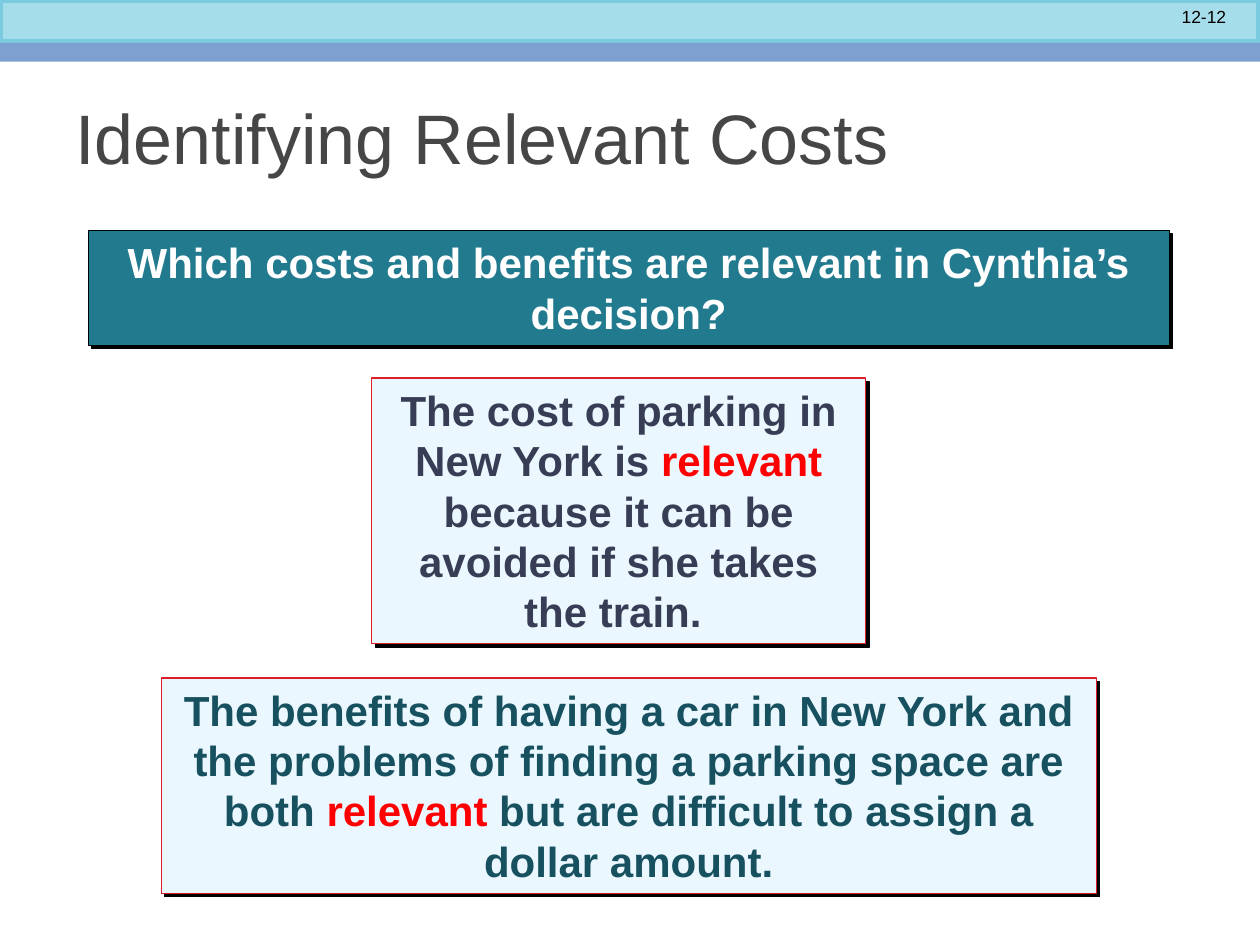
import pptx
import pptx.dml.color
import pptx.enum.shapes
import pptx.enum.text
import pptx.oxml.ns
import pptx.util
from lxml import etree

Inches = pptx.util.Inches
Pt = pptx.util.Pt
Align = pptx.enum.text.PP_ALIGN
Anchor = pptx.enum.text.MSO_ANCHOR
qn = pptx.oxml.ns.qn

COLORS = {
    "band": "A6DDEA",
    "band_edge": "7ACBE0",
    "stripe": "7DA0D0",
    "title": "464646",
    "question": "227A8F",
    "answer": "EBF7FF",
    "answer_edge": "DA1F28",
    "navy": "373D54",
    "teal": "175160",
    "highlight": "FF0000",
    "white": "FFFFFF",
    "black": "000000",
}


def rgb(name):
    return pptx.dml.color.RGBColor.from_string(COLORS[name])


def style_font(font, size, color, bold=False):
    font.name = "Arial"
    font.size = Pt(size)
    font.bold = bold
    font.color.rgb = rgb(color)


def add_rect(slide, box, fill, edge=None, edge_width=0.75):
    rect = slide.shapes.add_shape(
        pptx.enum.shapes.MSO_SHAPE.RECTANGLE, *map(Inches, box))
    rect.shadow.inherit = False
    rect.fill.solid()
    rect.fill.fore_color.rgb = rgb(fill)
    if edge:
        rect.line.color.rgb = rgb(edge)
        rect.line.width = Pt(edge_width)
    else:
        rect.line.fill.background()
    return rect


def add_hard_shadow(rect):
    effects = rect.element.spPr.find(qn("a:effectLst"))
    shadow = etree.SubElement(
        effects, qn("a:outerShdw"), dist=str(Pt(2.8)), dir="2700000",
        algn="ctr", rotWithShape="0")
    etree.SubElement(shadow, qn("a:srgbClr"), val=COLORS["black"])


def add_header(slide, box, page):
    left, top, width, height = box
    add_rect(slide, (left, top, width, 0.34), "band", "band_edge", 4)
    add_rect(slide, (left, top + 0.34, width, height - 0.34), "stripe")
    number = slide.shapes.add_textbox(
        Inches(left + width - 1.5), Inches(top), Inches(1.33), Inches(0.27))
    number.text_frame.word_wrap = True
    line = number.text_frame.paragraphs[0]
    line.text = page
    line.alignment = Align.RIGHT
    style_font(line.font, 10, "black")


def set_title(slide, box, text):
    title = slide.shapes.title
    title.left, title.top, title.width, title.height = map(Inches, box)
    title.text_frame.vertical_anchor = Anchor.MIDDLE
    line = title.text_frame.paragraphs[0]
    line.text = text
    line.alignment = Align.LEFT
    style_font(line.font, 40, "title")


def add_statement(slide, box, fill, edge, color, parts):
    panel = add_rect(slide, box, fill, edge)
    add_hard_shadow(panel)
    panel.text_frame.word_wrap = True
    panel.text_frame.vertical_anchor = Anchor.TOP
    line = panel.text_frame.paragraphs[0]
    line.alignment = Align.CENTER
    style_font(line.font, 24, color, bold=True)
    for part in parts:
        run = line.add_run()
        run.text = part
        if part == "relevant":
            run.font.color.rgb = rgb("highlight")


def main():
    deck = pptx.Presentation()
    deck.slide_width = Inches(10)
    deck.slide_height = Inches(7.5)
    slide = deck.slides.add_slide(deck.slide_layouts[5])

    add_header(slide, (0, 0, 10, 0.49), "12-12")
    set_title(slide, (0.5, 0.5, 9, 1.17), "Identifying Relevant Costs")
    add_statement(
        slide, (2.95, 3, 3.92, 2.11), "answer", "answer_edge", "navy",
        ["The cost of parking in New York is ", "relevant",
         " because it can be avoided if she takes the train. "])
    add_statement(
        slide, (1.28, 5.38, 7.42, 1.71), "answer", "answer_edge", "teal",
        ["The benefits of having a car in New York and the problems of "
         "finding a parking space are both ", "relevant",
         " but are difficult to assign a dollar amount."])
    add_statement(
        slide, (0.7, 1.83, 8.58, 0.91), "question", "black", "white",
        ["Which costs and benefits are relevant in Cynthia’s decision?"])
    deck.save("out.pptx")


if __name__ == "__main__":
    main()
